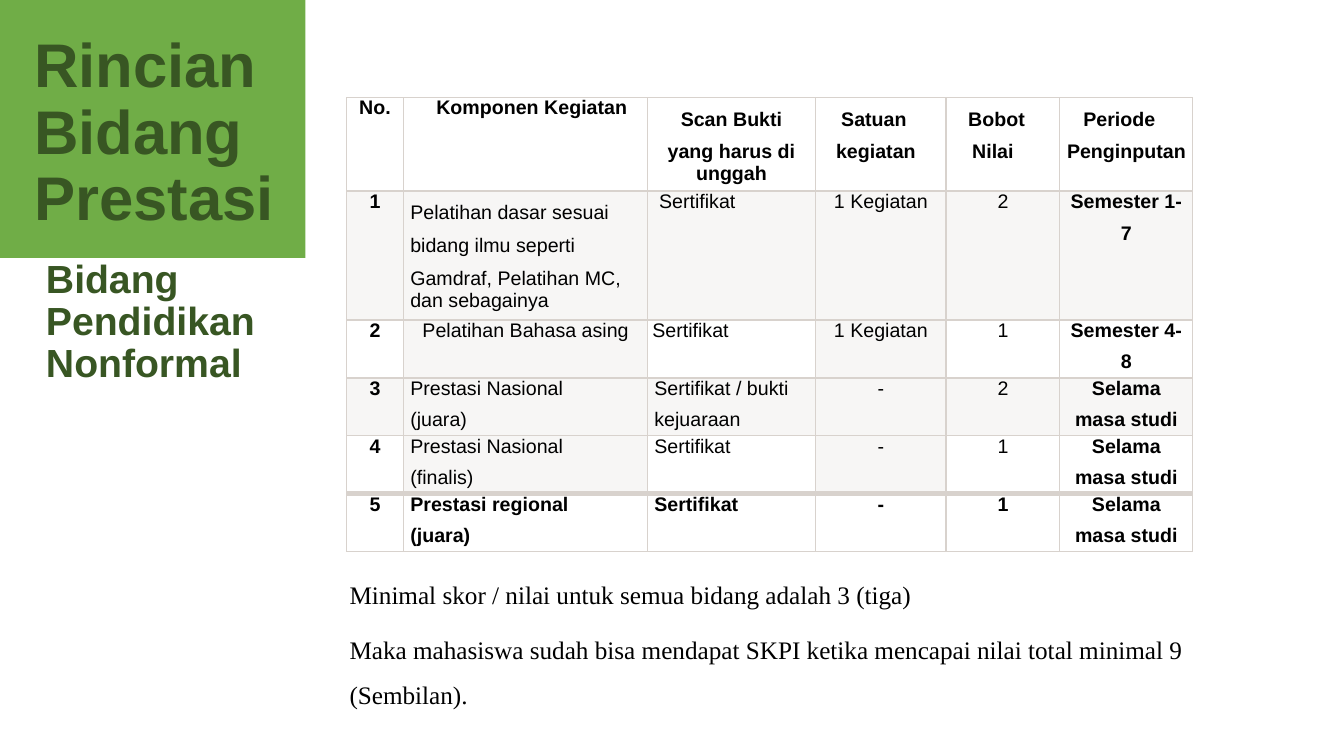
"""Build the slide that lists the activities of the achievement field."""
from lxml.etree import SubElement
from pptx import Presentation
from pptx.dml.color import RGBColor
from pptx.enum.shapes import MSO_SHAPE as Shape
from pptx.enum.text import MSO_ANCHOR as Anchor, PP_ALIGN as Align
from pptx.oxml import parse_xml
from pptx.oxml.ns import nsdecls, qn
from pptx.util import Cm, Pt

COLORS = {"green": "70AD47", "dark": "385623", "black": "000000", "grey": "D8D2CD"}
HEADING = {"name": "Arial", "bold": True}
BODY = {"name": "Arial", "size": Pt(14)}
NOTE = {"name": "Times New Roman", "size": Pt(18)}


def write(frame, paragraphs, font, color):
    """Fill a text frame with (text, format) paragraphs."""
    for index, (text, layout) in enumerate(paragraphs):
        para = frame.add_paragraph() if index else frame.paragraphs[0]
        para.text = text
        for key, value in layout.items():
            if key in ("marL", "marR", "indent"):
                para._p.get_or_add_pPr().set(key, str(Cm(value)))
            else:
                setattr(para, key, value)
        for span in para.runs:
            span.font.color.rgb = RGBColor.from_string(COLORS[color])
            for key, value in font.items():
                setattr(span.font, key, value)


def add_text(page, place, anchor, paragraphs, font, color):
    """Add a wrapping text box."""
    frame = page.shapes.add_textbox(*map(Cm, place)).text_frame
    frame.word_wrap = True
    frame.vertical_anchor = anchor
    write(frame, paragraphs, font, color)


deck = Presentation()
deck.slide_width, deck.slide_height = Cm(33.87), Cm(19.05)
page = deck.slides.add_slide(deck.slide_layouts[6])

banner = page.shapes.add_shape(Shape.RECTANGLE, 0, 0, Cm(7.7), Cm(6.5))
banner.shadow.inherit = False
banner.fill.solid()
banner.fill.fore_color.rgb = RGBColor.from_string(COLORS["green"])
banner.line.fill.background()

tight = {"line_spacing": 0.9}
add_text(page, (0.61, 1.52, 18.57, 3.73), Anchor.MIDDLE,
         [("Rincian\vBidang\vPrestasi", tight)], HEADING | {"size": Pt(44)}, "dark")
add_text(page, (0.91, 6.27, 6.4, 3.73), Anchor.MIDDLE,
         [("Bidang", tight), ("Pendidikan Nonformal", tight)],
         HEADING | {"size": Pt(28)}, "dark")

rows = [
    ["No.", "Komponen Kegiatan", "Scan Bukti yang harus di\nunggah",
     "Satuan kegiatan", "Bobot Nilai", "Periode Penginputan"],
    ["1", "Pelatihan dasar sesuai bidang ilmu seperti Gamdraf, Pelatihan MC,\ndan sebagainya",
     "Sertifikat", "1 Kegiatan", "2", "Semester 1-\n7"],
    ["2", "Pelatihan Bahasa asing", "Sertifikat", "1 Kegiatan", "1", "Semester 4-\n8"],
    ["3", "Prestasi Nasional\n(juara)", "Sertifikat / bukti\nkejuaraan", "-", "2",
     "Selama\nmasa studi"],
    ["4", "Prestasi Nasional\n(finalis)", "Sertifikat", "-", "1", "Selama\nmasa studi"],
    ["5", "Prestasi regional\n(juara)", "Sertifikat", "-", "1", "Selama\nmasa studi"],
]
widths = [1.42, 6.15, 4.25, 3.28, 2.87, 3.35]
heights = [2.18, 2.92, 1.46, 1.46, 1.46, 1.46]
rules = [1, 2, 1, 1, 1, 4, 1]

centered = {"alignment": Align.CENTER}
left = {"alignment": Align.LEFT, "marL": 0.18}
column_layouts = [centered, left, left, centered, centered, centered]
single, wide = {"line_spacing": 0.98}, {"line_spacing": 1.48}
spaced = {"space_before": Pt(6.8)}
proof = centered | {"marL": 0.43, "marR": 0.43}
first_layouts = {
    (0, 1): {"alignment": Align.RIGHT, "marR": 0.5},
    (0, 2): wide | proof,
    (0, 3): wide | {"alignment": Align.LEFT, "marL": 0.51, "indent": 0.13},
    (0, 4): wide | {"alignment": Align.LEFT, "marL": 0.66, "indent": -0.1},
    (0, 5): wide | {"alignment": Align.LEFT, "marL": 0.18, "indent": 0.41},
    (1, 1): {"line_spacing": 1.5, "marR": 0.5},
    (1, 2): {"marL": 0.3},
    (2, 1): {"alignment": Align.RIGHT, "marR": 0.46},
    (2, 2): {"marL": 0.13},
}
later_layouts = {(0, 2): proof | {"space_before": Pt(0.2)}, (1, 1): single}

holder = page.shapes.add_table(len(rows), len(widths), Cm(8.74), Cm(2.46),
                               Cm(sum(widths)), Cm(sum(heights)))
table = holder.table
table.first_row = table.horz_banding = False
for column, width in zip(table.columns, widths):
    column.width = Cm(width)
for r, (texts, height) in enumerate(zip(rows, heights)):
    table.rows[r].height = Cm(height)
    for c, text in enumerate(texts):
        cell = table.cell(r, c)
        cell.margin_left = cell.margin_right = cell.margin_top = cell.margin_bottom = 0
        base = column_layouts[c]
        first = base | single | first_layouts.get((r, c), {})
        later = base | later_layouts.get((r, c), spaced)
        bold = r in (0, 5) or c in (0, 5)
        write(cell.text_frame,
              [(line, later if i else first) for i, line in enumerate(text.split("\n"))],
              BODY | {"bold": bold}, "black")

        properties = cell._tc.get_or_add_tcPr()
        if r in (1, 3) or (r in (2, 4) and c in (1, 3)):
            cell.fill.solid()
            cell.fill.fore_color.rgb = RGBColor.from_string(COLORS["grey"])
            tint = properties.find(".//" + qn("a:srgbClr"))
            SubElement(tint, qn("a:alpha")).set("val", "20000")
        else:
            cell.fill.background()
        borders = {"lnL": 1, "lnR": 1, "lnT": rules[r], "lnB": rules[r + 1]}
        for position, (side, points) in enumerate(borders.items()):
            properties.insert(position, parse_xml(
                f'<a:{side} {nsdecls("a")} w="{Pt(points)}"><a:solidFill>'
                f'<a:srgbClr val="{COLORS["grey"]}"/></a:solidFill></a:{side}>'))
holder.height = Cm(8.33)

add_text(page, (6.5, 14.48, 25.76, 3.43), Anchor.TOP,
         [("Minimal skor / nilai untuk semua bidang adalah 3 (tiga)", {"marL": 2.06}),
          ("Maka mahasiswa sudah bisa mendapat SKPI ketika mencapai nilai total minimal 9 "
           "(Sembilan).", wide | {"marL": 2.06, "space_before": Pt(7)})],
         NOTE, "black")

deck.save("out.pptx")
